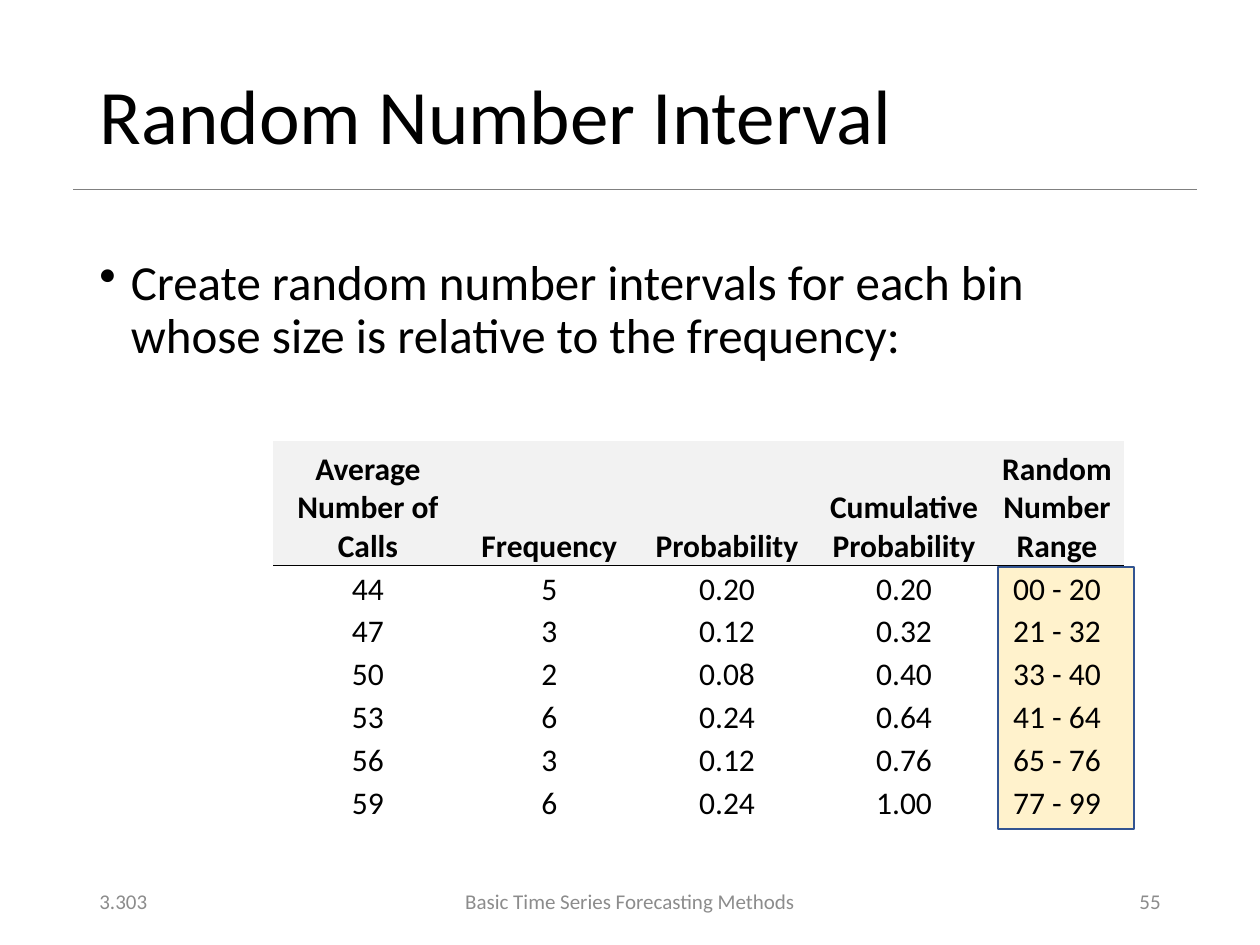
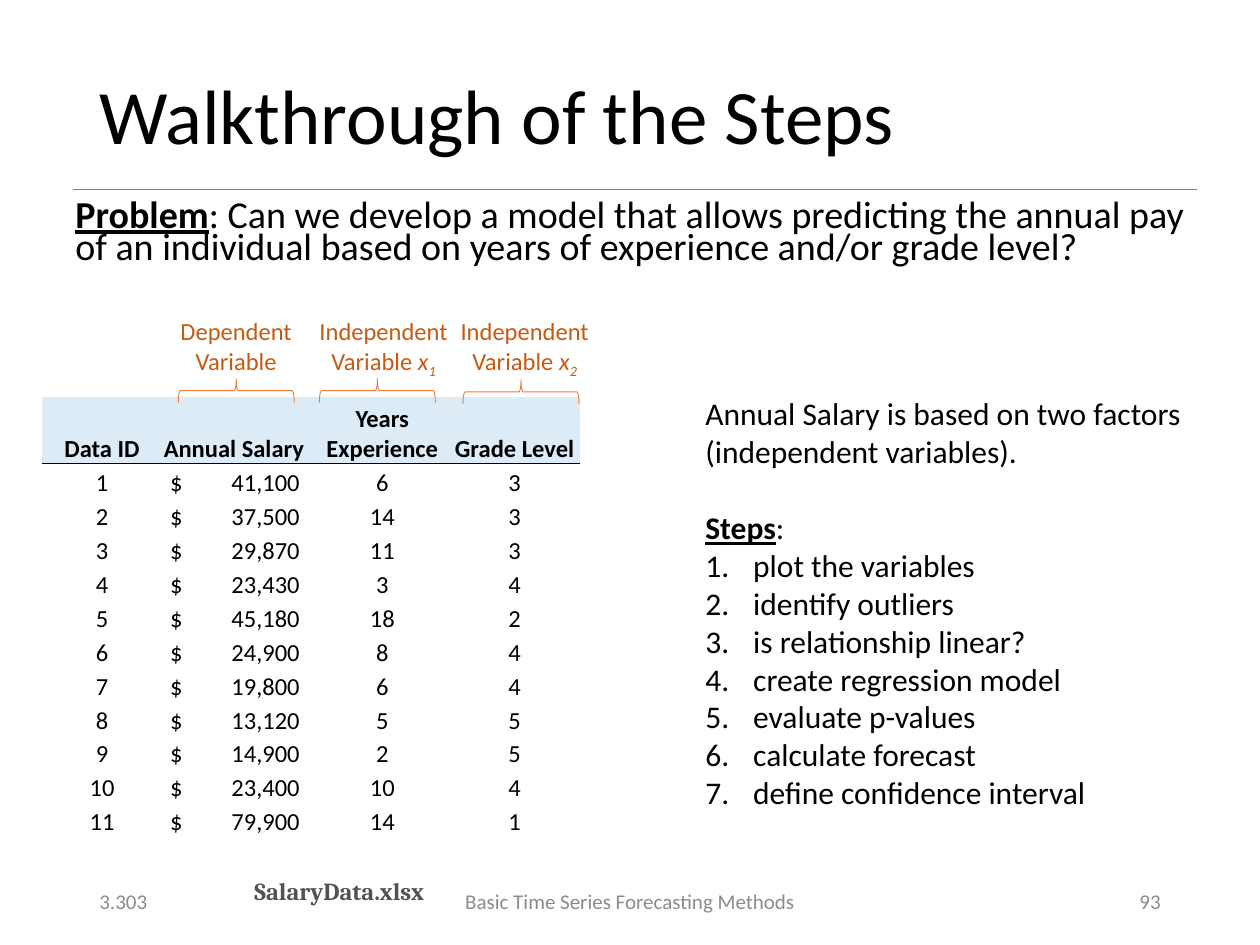
from dataclasses import dataclass

from lxml import etree
from pptx import Presentation
from pptx.dml.color import RGBColor
from pptx.enum.shapes import MSO_CONNECTOR, MSO_SHAPE
from pptx.enum.text import MSO_ANCHOR, MSO_AUTO_SIZE, PP_ALIGN
from pptx.oxml.ns import qn
from pptx.util import Inches, Pt

LEFT, CENTER, RIGHT = PP_ALIGN.LEFT, PP_ALIGN.CENTER, PP_ALIGN.RIGHT
TOP, MIDDLE, BOTTOM = MSO_ANCHOR.TOP, MSO_ANCHOR.MIDDLE, MSO_ANCHOR.BOTTOM
FIXED_SIZE = MSO_AUTO_SIZE.NONE
STRAIGHT = MSO_CONNECTOR.STRAIGHT
RECTANGLE, LEFT_BRACE = MSO_SHAPE.RECTANGLE, MSO_SHAPE.LEFT_BRACE
PLAIN_TABLE_STYLE = "{2D5ABB26-0587-4C30-8999-92F81FD0307C}"


@dataclass(frozen=True)
class Theme:
    font: str = "Calibri"
    file_font: str = "Cambria"
    text: str = "000000"
    footer: str = "8C8C8C"
    rule: str = "808080"
    file_name: str = "525252"
    variable: str = "C55A11"
    brace: str = "ED7D31"
    highlight: str = "FFF2CC"
    highlight_line: str = "325491"
    gray_header: str = "F2F2F2"
    blue_header: str = "DDEBF7"
    title_size: float = 44
    body_size: float = 28
    problem_size: float = 21.7
    text_size: float = 18
    label_size: float = 14
    footer_size: float = 12


THEME = Theme()


@dataclass(frozen=True)
class Box:
    left: float
    top: float
    width: float
    height: float

    def lengths(self) -> tuple:
        return tuple(Inches(v) for v in (self.left, self.top, self.width, self.height))


@dataclass(frozen=True)
class Piece:
    text: str
    bold: bool = False
    underline: bool = False
    italic: bool = False
    subscript: bool = False


@dataclass(frozen=True)
class Style:
    size: float
    color: str = THEME.text
    font: str = THEME.font
    bold: bool = False
    align: PP_ALIGN = LEFT
    line_spacing: float = 1.0


@dataclass(frozen=True)
class Line:
    pieces: tuple
    bullet: tuple = ()
    indent: float = 0
    space_before: float = 0


@dataclass(frozen=True)
class TableLook:
    box: Box
    columns: tuple
    header_height: float
    row_height: float
    size: float
    header_fill: str
    margin: float = 0
    money_column: int = -1


TITLE_BOX = Box(0.69, 0.4, 8.62, 1.1)
FOOTER_TOP, FOOTER_HEIGHT = 6.95, 0.4
HEADING = Style(THEME.title_size, line_spacing=0.9)
NUMBERED = ("a:buAutoNum", "type", "arabicPeriod")
DOT = ("a:buChar", "char", "•")

INTERVAL_ROWS = (
    ("Average Number of Calls", "Frequency", "Probability", "Cumulative Probability", "Random Number Range"),
    ("44", "5", "0.20", "0.20", "00 - 20"),
    ("47", "3", "0.12", "0.32", "21 - 32"),
    ("50", "2", "0.08", "0.40", "33 - 40"),
    ("53", "6", "0.24", "0.64", "41 - 64"),
    ("56", "3", "0.12", "0.76", "65 - 76"),
    ("59", "6", "0.24", "1.00", "77 - 99"),
)
SALARIES = (
    (41100, 6, 3), (37500, 14, 3), (29870, 11, 3), (23430, 3, 4),
    (45180, 18, 2), (24900, 8, 4), (19800, 6, 4), (13120, 5, 5),
    (14900, 2, 5), (23400, 10, 4), (79900, 14, 1),
)
STEPS = (
    "plot the variables", "identify outliers", "is relationship linear?",
    "create regression model", "evaluate p-values", "calculate forecast",
    "define confidence interval",
)


def color(value: str) -> RGBColor:
    return RGBColor.from_string(value)


def style_paragraph(paragraph, style: Style) -> None:
    paragraph.alignment = style.align
    paragraph.line_spacing = style.line_spacing
    font = paragraph.font
    font.name, font.size, font.bold = style.font, Pt(style.size), style.bold
    font.color.rgb = color(style.color)


def write_line(paragraph, line: Line, style: Style) -> None:
    for piece in line.pieces:
        run = paragraph.add_run()
        run.text = piece.text
        if piece.bold:
            run.font.bold = True
        if piece.underline:
            run.font.underline = True
        if piece.italic:
            run.font.italic = True
        if piece.subscript:
            run.font._element.set("baseline", "-25000")
    if line.space_before:
        paragraph.space_before = Pt(line.space_before)
    if line.bullet:
        tag, attribute, value = line.bullet
        properties = paragraph._p.get_or_add_pPr()
        properties.set("marL", str(Inches(line.indent)))
        properties.set("indent", str(-Inches(line.indent)))
        etree.SubElement(properties, qn(tag)).set(attribute, value)
    style_paragraph(paragraph, style)


def add_text(slide, box: Box, lines: tuple, style: Style, anchor=TOP, wrap: bool = True) -> None:
    frame = slide.shapes.add_textbox(*box.lengths()).text_frame
    frame.word_wrap = wrap
    frame.vertical_anchor = anchor
    for index, line in enumerate(lines):
        paragraph = frame.add_paragraph() if index else frame.paragraphs[0]
        write_line(paragraph, line, style)


def plain(text: str) -> tuple:
    return (Line((Piece(text),)),)


def add_base_slide(presentation, title: str, number: int):
    slide = presentation.slides.add_slide(presentation.slide_layouts[5])
    heading = slide.shapes.title
    heading.left, heading.top, heading.width, heading.height = TITLE_BOX.lengths()
    frame = heading.text_frame
    frame.text = title
    frame.auto_size = FIXED_SIZE
    frame.vertical_anchor = MIDDLE
    style_paragraph(frame.paragraphs[0], HEADING)

    rule = slide.shapes.add_connector(STRAIGHT, Inches(0.58), Inches(1.5), Inches(9.5), Inches(1.5))
    rule.line.color.rgb = color(THEME.rule)
    rule.line.width = Pt(0.5)
    etree.SubElement(rule._element.spPr, qn("a:effectLst"))

    for left, width, text, align in (
        (0.69, 2.25, "3.303", LEFT),
        (3.31, 3.38, "Basic Time Series Forecasting Methods", CENTER),
        (7.06, 2.25, str(number), RIGHT),
    ):
        style = Style(THEME.footer_size, THEME.footer, align=align)
        add_text(slide, Box(left, FOOTER_TOP, width, FOOTER_HEIGHT), plain(text), style, MIDDLE)
    return slide


def add_outlined_shape(slide, kind, box: Box, line_color: str, line_width: float):
    shape = slide.shapes.add_shape(kind, *box.lengths())
    shape.shadow.inherit = False
    shape.fill.background()
    shape.line.color.rgb = color(line_color)
    shape.line.width = Pt(line_width)
    return shape


def add_bottom_border(cell) -> None:
    border = etree.Element(qn("a:lnB"), w=str(Pt(0.5)))
    fill = etree.SubElement(border, qn("a:solidFill"))
    etree.SubElement(fill, qn("a:srgbClr"), val=THEME.text)
    cell._tc.get_or_add_tcPr().insert(0, border)


def add_right_tab(paragraph, position: float) -> None:
    tabs = etree.SubElement(paragraph._p.get_or_add_pPr(), qn("a:tabLst"))
    etree.SubElement(tabs, qn("a:tab"), pos=str(Inches(position)), algn="r")


def add_data_table(slide, rows: tuple, look: TableLook) -> None:
    table = slide.shapes.add_table(len(rows), len(look.columns), *look.box.lengths()).table
    table.horz_banding = False
    table._tbl.tblPr.find(qn("a:tableStyleId")).text = PLAIN_TABLE_STYLE
    for column, width in zip(table.columns, look.columns):
        column.width = Inches(width)
    for row_index, values in enumerate(rows):
        is_header = row_index == 0
        table.rows[row_index].height = Inches(look.header_height if is_header else look.row_height)
        for column_index, value in enumerate(values):
            cell = table.cell(row_index, column_index)
            is_money = column_index == look.money_column
            cell.margin_left = cell.margin_right = cell.margin_top = Inches(look.margin)
            cell.margin_bottom = 0
            cell.vertical_anchor = BOTTOM
            cell.text = value
            paragraph = cell.text_frame.paragraphs[0]
            if is_header:
                cell.fill.solid()
                cell.fill.fore_color.rgb = color(look.header_fill)
                add_bottom_border(cell)
            else:
                cell.fill.background()
                if is_money:
                    cell.margin_left = Inches(0.06)
                    add_right_tab(paragraph, 1.03)
            align = LEFT if is_money else CENTER
            style_paragraph(paragraph, Style(look.size, bold=is_header, align=align))


def add_variable_label(slide, left: float, brace_left: float, brace_top: float, pieces: tuple) -> None:
    style = Style(THEME.label_size, THEME.variable, align=CENTER)
    add_text(slide, Box(left, 2.46, 1.33, 0.57), (Line(pieces),), style)
    brace = add_outlined_shape(slide, LEFT_BRACE, Box(brace_left, brace_top, 0.19, 0.92), THEME.brace, 0.5)
    brace.rotation = 90


def build_interval_slide(presentation) -> None:
    slide = add_base_slide(presentation, "Random Number Interval", 55)
    highlight = add_outlined_shape(slide, RECTANGLE, Box(7.92, 4.5, 1.08, 2.08), THEME.highlight_line, 1)
    highlight.fill.solid()
    highlight.fill.fore_color.rgb = color(THEME.highlight)
    sentence = Piece("Create random number intervals for each bin whose size is relative to the frequency:")
    add_text(slide, Box(0.69, 2, 8.62, 1.3), (Line((sentence,), DOT, 0.25),),
             Style(THEME.body_size, line_spacing=0.9))
    add_data_table(slide, INTERVAL_ROWS, TableLook(
        Box(2.17, 3.5, 6.75, 3), (1.5, 1.38, 1.44, 1.37, 1.06), 0.99, 0.34,
        THEME.text_size, THEME.gray_header))


def build_walkthrough_slide(presentation) -> None:
    slide = add_base_slide(presentation, "Walkthrough of the Steps", 93)
    problem = Line((
        Piece("Problem", bold=True, underline=True),
        Piece(": Can we develop a model that allows predicting the annual pay of an individual "
              "based on years of experience and/or grade level?"),
    ))
    add_text(slide, Box(0.5, 1.56, 9, 0.95), (problem,), Style(THEME.problem_size, line_spacing=0.7))
    add_text(slide, Box(1.92, 6.9, 1.59, 0.34), plain("SalaryData.xlsx"),
             Style(THEME.label_size, THEME.file_name, THEME.file_font, bold=True), wrap=False)

    header = ("Data ID", "Annual Salary", "Years Experience", "Grade Level")
    body = tuple((str(index), f"$\t{salary:,}", str(years), str(grade))
                 for index, (salary, years, grade) in enumerate(SALARIES, 1))
    add_data_table(slide, (header, *body), TableLook(
        Box(0.33, 3.15, 4.28, 3.47), (0.96, 1.21, 1.07, 1.03), 0.53, 0.27,
        THEME.label_size, THEME.blue_header, margin=0.01, money_column=1))

    add_variable_label(slide, 1.21, 1.78, 2.64, (Piece("Dependent Variable"),))
    for index, left, brace_left, brace_top in (("1", 2.38, 2.9, 2.64), ("2", 3.5, 4.04, 2.65)):
        add_variable_label(slide, left, brace_left, brace_top, (
            Piece("Independent Variable "),
            Piece("x", italic=True),
            Piece(index, italic=True, subscript=True),
        ))

    summary = plain("Annual Salary is based on two factors (independent variables).")
    steps_heading = Line((Piece("Steps", bold=True, underline=True), Piece(":")), space_before=22)
    steps = tuple(Line((Piece(step),), NUMBERED, 0.38) for step in STEPS)
    add_text(slide, Box(5.5, 3.08, 4.17, 3.43), (*summary, steps_heading, *steps), Style(THEME.text_size))


def main() -> None:
    presentation = Presentation()
    presentation.slide_width, presentation.slide_height = Inches(10), Inches(7.5)
    build_interval_slide(presentation)
    build_walkthrough_slide(presentation)
    presentation.save("out.pptx")


if __name__ == "__main__":
    main()
